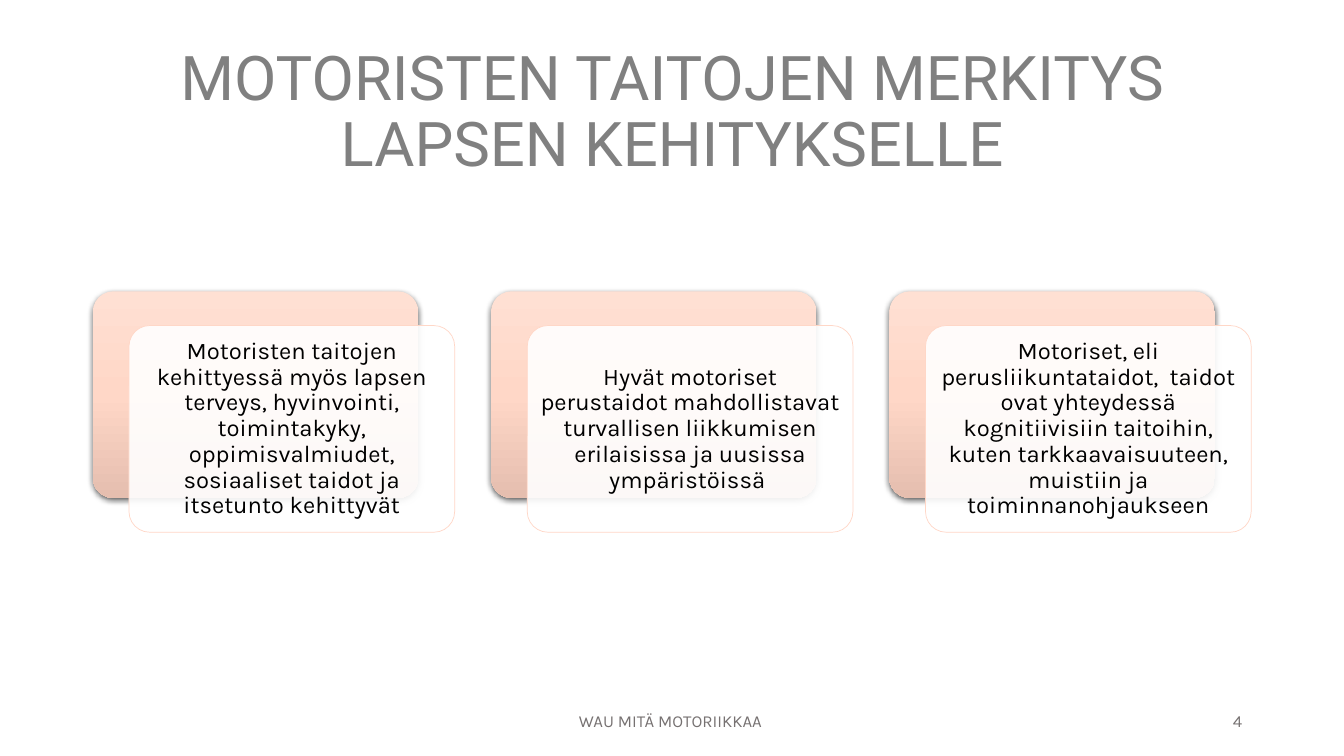
from dataclasses import dataclass

from pptx import Presentation
from pptx.dml.color import RGBColor as Rgb
from pptx.enum.shapes import MSO_SHAPE as Shape
from pptx.enum.text import MSO_ANCHOR as Anchor, MSO_AUTO_SIZE as Fit, PP_ALIGN as Align
from pptx.oxml import parse_xml
from pptx.oxml.ns import nsdecls, qn
from pptx.util import Inches, Pt


@dataclass(frozen=True)
class Theme:
    head: str = "Roboto"
    body: str = "Karla"
    title: str = "808080"
    foot: str = "767171"
    ink: str = "000000"
    card: str = "FFFFFF"
    edge: str = "FFD7C7"
    shades: tuple = ("FFE0D3", "FFD7C7", "E5BEAF")
    big: int = 44
    mid: int = 17
    small: int = 12


class Deck:
    def __init__(self, theme):
        self.theme = theme
        self.prs = Presentation()
        self.prs.slide_width, self.prs.slide_height = Inches(13.33), Inches(7.5)
        layout = self.prs.slide_layouts.get_by_name("Title Only")
        self.slide = self.prs.slides.add_slide(layout)

    def label(self, shape, text, face, size, color, align=Align.CENTER):
        frame = shape.text_frame
        frame.word_wrap = True
        frame.auto_size = Fit.NONE
        frame.vertical_anchor = Anchor.MIDDLE
        par = frame.paragraphs[0]
        par.text = text
        par.alignment = align
        font = par.font
        font.name, font.size = face, Pt(size)
        font.color.rgb = Rgb.from_string(color)
        return frame

    def title(self, text, x, y, w, h):
        box = self.slide.shapes.title
        box.left, box.top, box.width, box.height = map(Inches, (x, y, w, h))
        t = self.theme
        frame = self.label(box, text, t.head, t.big, t.title)
        frame.paragraphs[0].line_spacing = 0.9

    def footer(self, text, x, w, align):
        box = self.slide.shapes.add_textbox(*map(Inches, (x, 6.95, w, 0.4)))
        t = self.theme
        self.label(box, text, t.body, t.small, t.foot, align)

    def panel(self, x, y, w, h):
        box = self.slide.shapes.add_shape(
            Shape.ROUNDED_RECTANGLE, *map(Inches, (x, y, w, h)))
        box.adjustments[0] = 0.1
        box.shadow.inherit = False
        return box

    def back(self, *area):
        """Add a shaded panel with a soft drop shadow."""
        box = self.panel(*area)
        box.line.fill.background()
        box.fill.gradient()
        box.fill.gradient_angle = 270
        props = box._element.spPr
        stops = props.find(qn("a:gradFill")).find(qn("a:gsLst"))
        stops.clear()
        for i, shade in enumerate(self.theme.shades):
            stops.append(parse_xml(
                f'<a:gs {nsdecls("a")} pos="{i * 50000}"><a:srgbClr val="{shade}"/></a:gs>'))
        props.find(qn("a:effectLst")).append(parse_xml(
            f'<a:outerShdw {nsdecls("a")} blurRad="{Pt(4.5)}" dist="{Pt(1.5)}" '
            'dir="5400000" algn="ctr" rotWithShape="0"><a:srgbClr val="000000">'
            '<a:alpha val="63000"/></a:srgbClr></a:outerShdw>'))

    def card(self, text, *area):
        """Add a slightly see-through panel that holds text."""
        t = self.theme
        box = self.panel(*area)
        box.fill.solid()
        box.fill.fore_color.rgb = Rgb.from_string(t.card)
        color = box._element.spPr.find(qn("a:solidFill"))[0]
        color.append(parse_xml(f'<a:alpha {nsdecls("a")} val="90000"/>'))
        box.line.color.rgb = Rgb.from_string(t.edge)
        box.line.width = Pt(0.5)
        frame = self.label(box, text, t.body, t.mid, t.ink)
        frame.margin_left = frame.margin_right = Inches(0.07)
        frame.margin_top = frame.margin_bottom = Inches(0.07)
        frame.paragraphs[0].line_spacing = 0.9


SKILLS = (
    "Motoristen taitojen kehittyessä myös lapsen terveys, hyvinvointi, toimintakyky, "
    "oppimisvalmiudet, sosiaaliset taidot ja itsetunto kehittyvät",
    "Hyvät motoriset perustaidot mahdollistavat turvallisen liikkumisen erilaisissa "
    "ja uusissa ympäristöissä ",
    "Motoriset, eli perusliikuntataidot,  taidot ovat yhteydessä kognitiivisiin "
    "taitoihin, kuten tarkkaavaisuuteen, muistiin ja toiminnanohjaukseen",
)


def main():
    deck = Deck(Theme())
    deck.title("MOTORISTEN TAITOJEN MERKITYS LAPSEN KEHITYKSELLE", 0.92, 0.4, 11.5, 1.45)
    deck.footer("WAU MITÄ MOTORIIKKAA ", 4.42, 4.5, Align.CENTER)
    deck.footer("4", 9.42, 3, Align.RIGHT)
    left, top, wide, high, pitch = 0.92, 2.89, 3.23, 2.05, 3.95
    for i, text in enumerate(SKILLS):
        x = left + i * pitch
        deck.back(x, top, wide, high)
        deck.card(text, x + 0.36, top + 0.34, wide, high)
    deck.prs.save("out.pptx")


if __name__ == "__main__":
    main()
